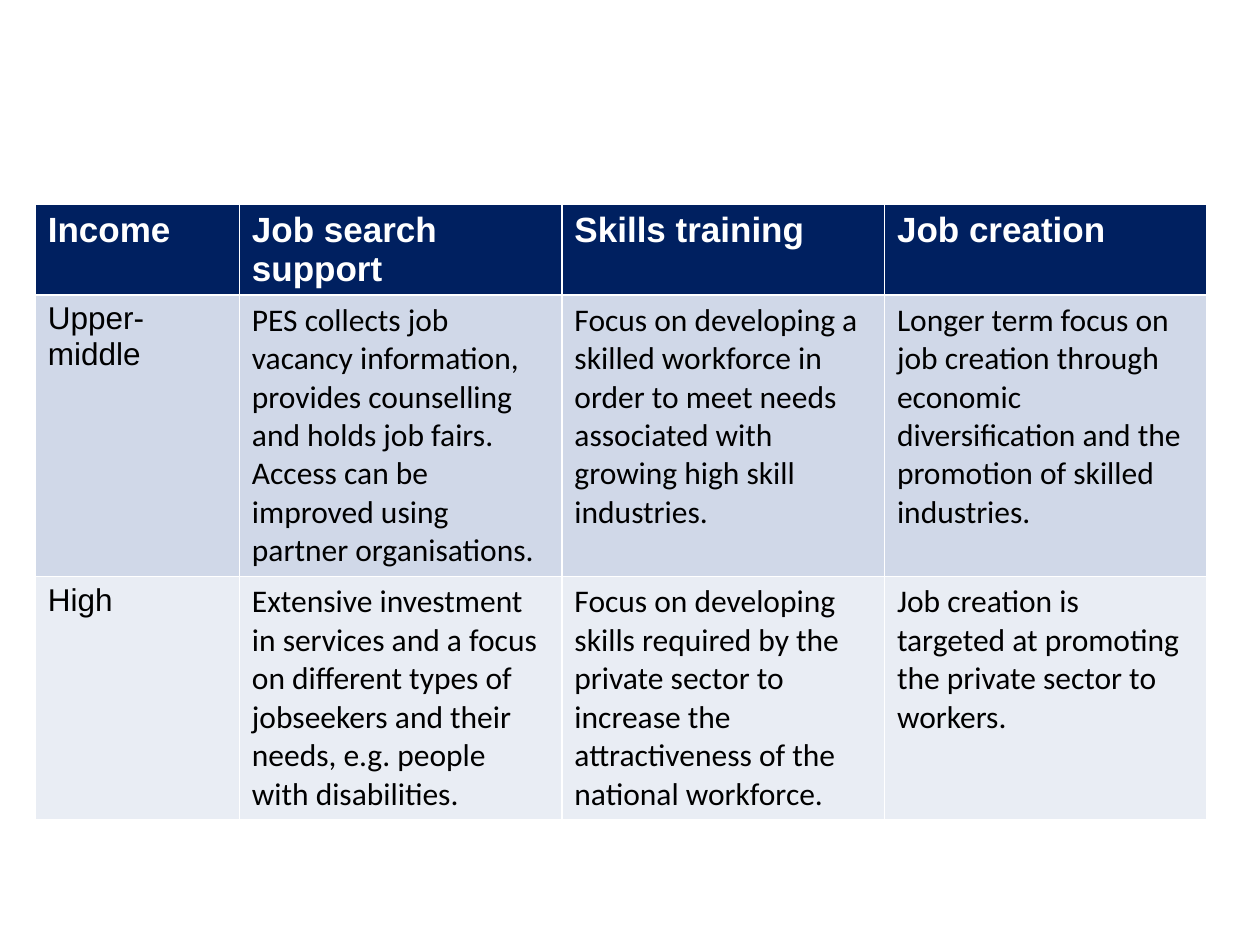
from pptx import Presentation
from pptx.dml.color import RGBColor
from pptx.util import Inches, Pt

HEADS = ["Income", "Job search support", "Skills training", "Job creation"]
ROWS = [
    ["Upper-middle",
     "PES collects job vacancy information, provides counselling and holds "
     "job fairs. Access can be improved using partner organisations.",
     "Focus on developing a skilled workforce in order to meet needs "
     "associated with growing high skill industries.",
     "Longer term focus on job creation through economic diversification "
     "and the promotion of skilled industries."],
    ["High",
     "Extensive investment in services and a focus on different types of "
     "jobseekers and their needs, e.g. people with disabilities.",
     "Focus on developing skills required by the private sector to increase "
     "the attractiveness of the national workforce.",
     "Job creation is targeted at promoting the private sector to workers."],
]
COLORS = {"head": "002060", "odd": "D0D8E8", "even": "E9EDF4",
          "light": "FFFFFF", "dark": "000000"}
LEFT, TOP, WIDTH, HEIGHT = 0.28, 1.62, 9.3, 4.65
FIRST = 1.62
HEAD_ROW, BODY_ROW = 0.55, 0.89


def color(name):
    return RGBColor.from_string(COLORS[name])


def style(cell, text, fill, ink, face, size, bold=False):
    cell.text = text
    cell.fill.solid()
    cell.fill.fore_color.rgb = color(fill)
    font = cell.text_frame.paragraphs[0].font
    font.name, font.size, font.bold = face, Pt(size), bold
    font.color.rgb = color(ink)


prs = Presentation()
prs.slide_width, prs.slide_height = Inches(10), Inches(7.5)
slide = prs.slides.add_slide(prs.slide_layouts[6])

# The default table style supplies the white rules, thicker under the header.
frame = slide.shapes.add_table(
    len(ROWS) + 1, len(HEADS),
    Inches(LEFT), Inches(TOP), Inches(WIDTH), Inches(HEIGHT))
table = frame.table

other = (WIDTH - FIRST) / (len(HEADS) - 1)
for c, col in enumerate(table.columns):
    col.width = Inches(other if c else FIRST)
for r, row in enumerate(table.rows):
    row.height = Inches(BODY_ROW if r else HEAD_ROW)
frame.height = Inches(HEIGHT)

for c, text in enumerate(HEADS):
    style(table.cell(0, c), text, "head", "light", "Arial", 20, True)
for r, texts in enumerate(ROWS, 1):
    for c, text in enumerate(texts):
        style(table.cell(r, c), text, "odd" if r % 2 else "even", "dark",
              "Calibri" if c else "Arial", 18)

prs.save("out.pptx")
